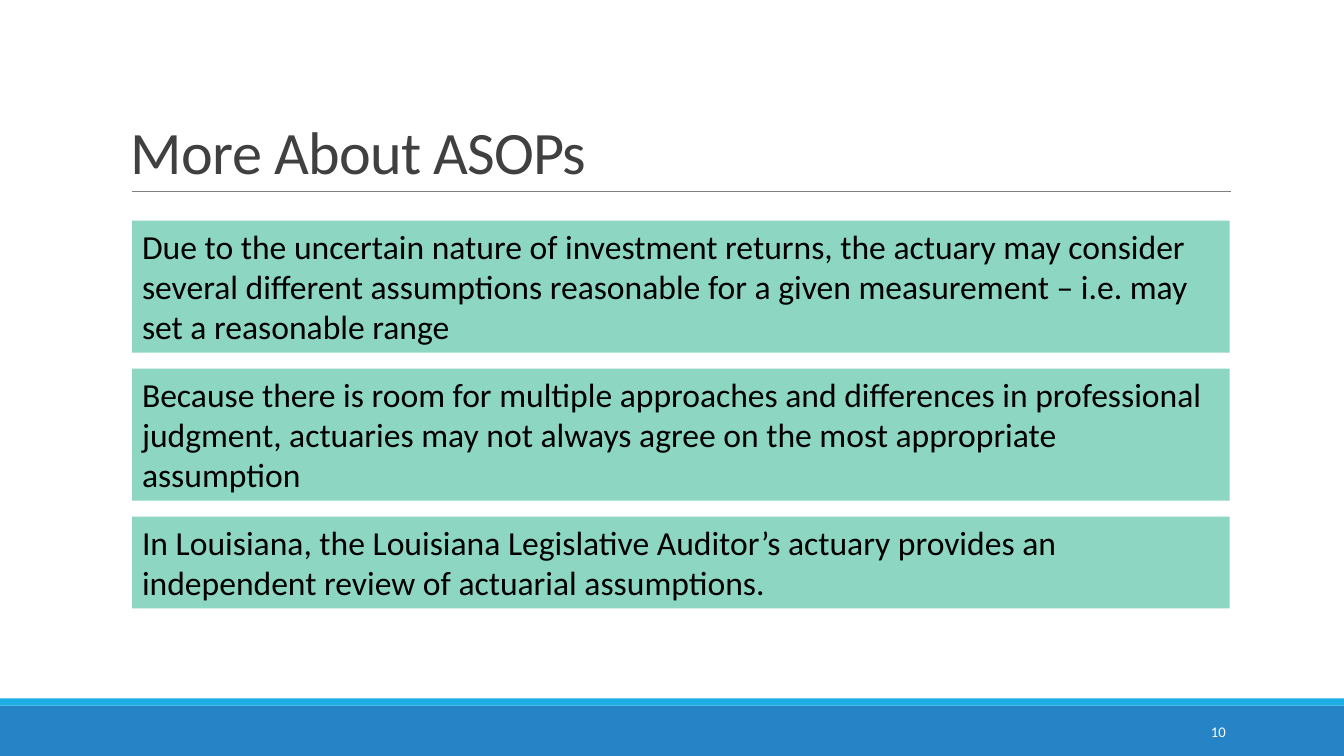
"""Build the slide "More About ASOPs"."""
from pptx import Presentation, util as u
from pptx.dml.color import RGBColor
from pptx.enum import shapes, text
from pptx.oxml.ns import qn
from lxml import etree

TITLE = "More About ASOPs"
PAGE = "10"
POINTS = [
    ("Due to the uncertain nature of investment returns, the actuary may consider several "
     "different assumptions reasonable for a given measurement – i.e. may set a reasonable range", 3),
    ("Because there is room for multiple approaches and differences in professional judgment, "
     "actuaries may not always agree on the most appropriate assumption", 3),
    ("In Louisiana, the Louisiana Legislative Auditor’s actuary provides an independent review "
     "of actuarial assumptions.", 2),
]
THEME = dict(font="Calibri", title="404040", body="000000", page="FFFFFF", rule="808080",
             card="8DD6C1", footer="2683C6", stripe="1CADE4",
             title_pt=43, body_pt=24, page_pt=10.5)
WIDTH, HEIGHT = 33.87, 19.05
LEFT, CARD_W, CARD_TOP, GAP = 3.33, 27.66, 5.56, 0.4
LINE_H, PADDING = 1.02, 0.27
RULE_Y, RULE_END = 4.83, 31.01
FOOTER_H, STRIPE_H = 1.27, 0.18


def color(name):
    return RGBColor.from_string(THEME[name])


def add_run(sp, words, role, anchor, align=text.PP_ALIGN.LEFT):
    tf = sp.text_frame
    tf.word_wrap = True
    tf.vertical_anchor = anchor
    p = tf.paragraphs[0]
    p.alignment = align
    r = p.add_run()
    r.text = words
    r.font.name = THEME["font"]
    r.font.size = u.Pt(THEME[role + "_pt"])
    r.font.color.rgb = color(role)
    return p, r


def add_rect(s, fill, *box):
    sp = s.shapes.add_shape(shapes.MSO_SHAPE.RECTANGLE, *map(u.Cm, box))
    sp.shadow.inherit = False
    sp.fill.solid()
    sp.fill.fore_color.rgb = color(fill)
    sp.line.fill.background()
    return sp


def add_rule(s):
    line = s.shapes.add_connector(shapes.MSO_CONNECTOR.STRAIGHT,
                                  *map(u.Cm, (LEFT, RULE_Y, RULE_END, RULE_Y)))
    line.line.color.rgb = color("rule")
    line.line.width = u.Pt(0.5)
    etree.SubElement(line._element.spPr, qn("a:effectLst"))


def main():
    prs = Presentation()
    prs.slide_width, prs.slide_height = u.Cm(WIDTH), u.Cm(HEIGHT)
    s = prs.slides.add_slide(prs.slide_layouts[6])

    footer_top = HEIGHT - FOOTER_H
    add_rect(s, "footer", 0, footer_top, WIDTH, FOOTER_H)
    add_rect(s, "stripe", 0, footer_top - STRIPE_H, WIDTH, STRIPE_H)
    add_rule(s)

    title = s.shapes.add_textbox(*map(u.Cm, (3.05, 0.79, 27.94, 4.04)))
    p, r = add_run(title, TITLE, "title", text.MSO_ANCHOR.BOTTOM)
    p.line_spacing = 0.85
    r.font._element.set("spc", "-50")

    top = CARD_TOP
    for words, lines in POINTS:
        height = lines * LINE_H + PADDING
        card = add_rect(s, "card", LEFT, top, CARD_W, height)
        add_run(card, words, "body", text.MSO_ANCHOR.TOP)
        card.text_frame.auto_size = text.MSO_AUTO_SIZE.SHAPE_TO_FIT_TEXT
        top += height + GAP

    page = s.shapes.add_textbox(*map(u.Cm, (27.51, 17.93, 3.63, 1.02)))
    add_run(page, PAGE, "page", text.MSO_ANCHOR.MIDDLE, text.PP_ALIGN.RIGHT)
    prs.save("out.pptx")


if __name__ == "__main__":
    main()
